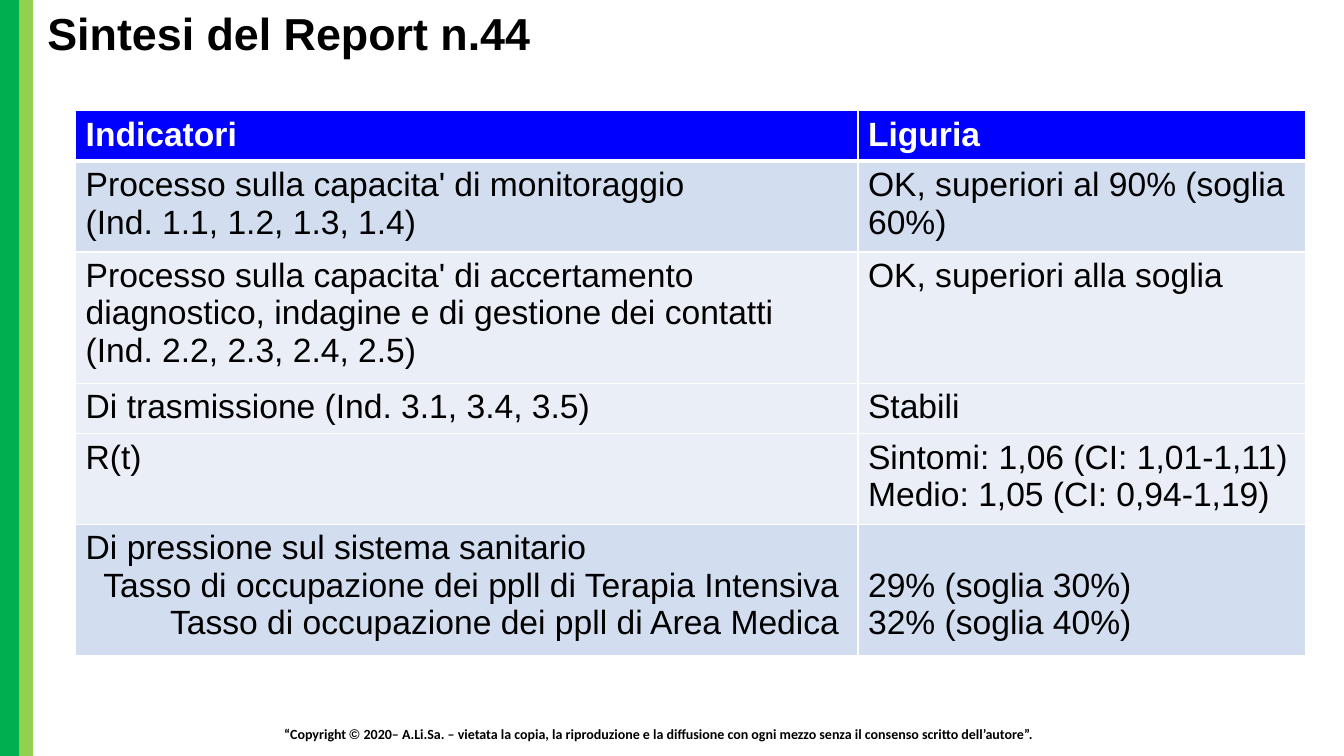
from lxml.etree import SubElement
from pptx import Presentation
from pptx.dml.color import RGBColor
from pptx.enum.shapes import MSO_SHAPE
from pptx.enum.text import MSO_ANCHOR, PP_ALIGN
from pptx.oxml.ns import qn
from pptx.util import Inches, Pt

GREEN = RGBColor(0x00, 0xB0, 0x50)
LIME = RGBColor(0x92, 0xD0, 0x50)
BLUE = RGBColor(0x00, 0x00, 0xFF)
BAND = RGBColor(0xD2, 0xDE, 0xEF)
PALE = RGBColor(0xEA, 0xEF, 0xF7)
WHITE = RGBColor(0xFF, 0xFF, 0xFF)
BLACK = RGBColor(0x00, 0x00, 0x00)

COLUMN_WIDTHS = (7.76, 4.44)
# Row height, fill, indicator lines, Liguria lines
INDICATORS = [
    (0.5, BLUE, ["Indicatori"], ["Liguria"]),
    (0.9, BAND,
     ["Processo sulla capacita' di monitoraggio", "(Ind. 1.1, 1.2, 1.3, 1.4)"],
     ["OK, superiori al 90% (soglia 60%)"]),
    (1.3, PALE,
     ["Processo sulla capacita' di accertamento diagnostico, indagine "
      "e di gestione dei contatti (Ind. 2.2, 2.3, 2.4, 2.5)"],
     ["OK, superiori alla soglia"]),
    (0.5, PALE, ["Di trasmissione (Ind. 3.1, 3.4, 3.5)"], ["Stabili"]),
    (0.9, PALE, ["R(t)"],
     ["Sintomi: 1,06 (CI: 1,01-1,11)", "Medio: 1,05 (CI: 0,94-1,19)"]),
    (1.3, BAND,
     ["Di pressione sul sistema sanitario",
      "Tasso di occupazione dei ppll di Terapia Intensiva",
      "Tasso di occupazione dei ppll di Area Medica"],
     ["29% (soglia 30%)", "32% (soglia 40%)"]),
]
COPYRIGHT = [
    ("“Copyright ", "Calibri"),
    ("© ", "Arial"),
    ("2020– A.Li.Sa. – vietata la copia, la riproduzione e la diffusione "
     "con ogni mezzo senza il consenso scritto dell’autore”.", "Calibri"),
]


def set_font(font, size, color, bold):
    font.name = "Arial"
    font.size = Pt(size)
    font.color.rgb = color
    font.bold = bold


def add_side_stripes(slide, left, top, height):
    for width, color in ((0.19, GREEN), (0.14, LIME)):
        stripe = slide.shapes.add_shape(
            MSO_SHAPE.RECTANGLE, Inches(left), Inches(top), Inches(width), Inches(height))
        stripe.shadow.inherit = False
        stripe.fill.solid()
        stripe.fill.fore_color.rgb = color
        stripe.line.fill.background()
        left += width


def place_title(slide, left, top, width, height):
    title = slide.shapes.title
    title.left, title.top = Inches(left), Inches(top)
    title.width, title.height = Inches(width), Inches(height)
    title.text_frame.text = "Sintesi del Report n.44"
    title.text_frame.vertical_anchor = MSO_ANCHOR.MIDDLE
    heading = title.text_frame.paragraphs[0]
    heading.alignment = PP_ALIGN.LEFT
    heading.line_spacing = 0.9
    set_font(heading.font, 32, BLACK, True)


def add_borders(cell, top, bottom):
    """Draw white cell borders, with top and bottom widths in points."""
    properties = cell._tc.get_or_add_tcPr()
    edges = (("a:lnL", 1), ("a:lnR", 1), ("a:lnT", top), ("a:lnB", bottom))
    for position, (tag, width) in enumerate(edges):
        border = SubElement(properties, qn(tag), w=str(Pt(width)))
        fill = SubElement(border, qn("a:solidFill"))
        SubElement(fill, qn("a:srgbClr"), val=str(WHITE))
        properties.insert(position, border)


def fill_cell(cell, lines, color, is_header):
    cell.fill.solid()
    cell.fill.fore_color.rgb = color
    cell.text = "\n".join(lines)
    for paragraph in cell.text_frame.paragraphs:
        set_font(paragraph.font, 24, WHITE if is_header else BLACK, is_header)


def add_indicator_table(slide, left, top):
    heights = [row[0] for row in INDICATORS]
    table = slide.shapes.add_table(
        len(INDICATORS), len(COLUMN_WIDTHS), Inches(left), Inches(top),
        Inches(sum(COLUMN_WIDTHS)), Inches(sum(heights))).table
    for column, width in zip(table.columns, COLUMN_WIDTHS):
        column.width = Inches(width)
    for index, (height, color, *texts) in enumerate(INDICATORS):
        table.rows[index].height = Inches(height)
        for cell, lines in zip(table.rows[index].cells, texts):
            fill_cell(cell, lines, color, index == 0)
            add_borders(cell, 3 if index == 1 else 1, 3 if index == 0 else 1)

    pressure, occupancy = table.rows[len(INDICATORS) - 1].cells
    pressure.margin_right = Inches(0.19)
    for rate in pressure.text_frame.paragraphs[1:]:
        rate.alignment = PP_ALIGN.RIGHT
    # Rates line up with the second line of the indicator
    occupancy.margin_top = Inches(0.42)


def add_copyright(slide, left, top, width, height):
    box = slide.shapes.add_textbox(
        Inches(left), Inches(top), Inches(width), Inches(height))
    box.text_frame.word_wrap = True
    notice = box.text_frame.paragraphs[0]
    set_font(notice.font, 10, BLACK, True)
    for text, font_name in COPYRIGHT:
        run = notice.add_run()
        run.text = text
        run.font.name = font_name


def main():
    presentation = Presentation()
    presentation.slide_width = Inches(13.33)
    presentation.slide_height = Inches(7.5)
    slide = presentation.slides.add_slide(presentation.slide_layouts[5])
    add_side_stripes(slide, 0, 0, 7.5)
    add_copyright(slide, 2.72, 7.15, 7.9, 0.27)
    place_title(slide, 0.37, 0, 12.96, 0.72)
    add_indicator_table(slide, 0.75, 1.1)
    presentation.save("out.pptx")


if __name__ == "__main__":
    main()
